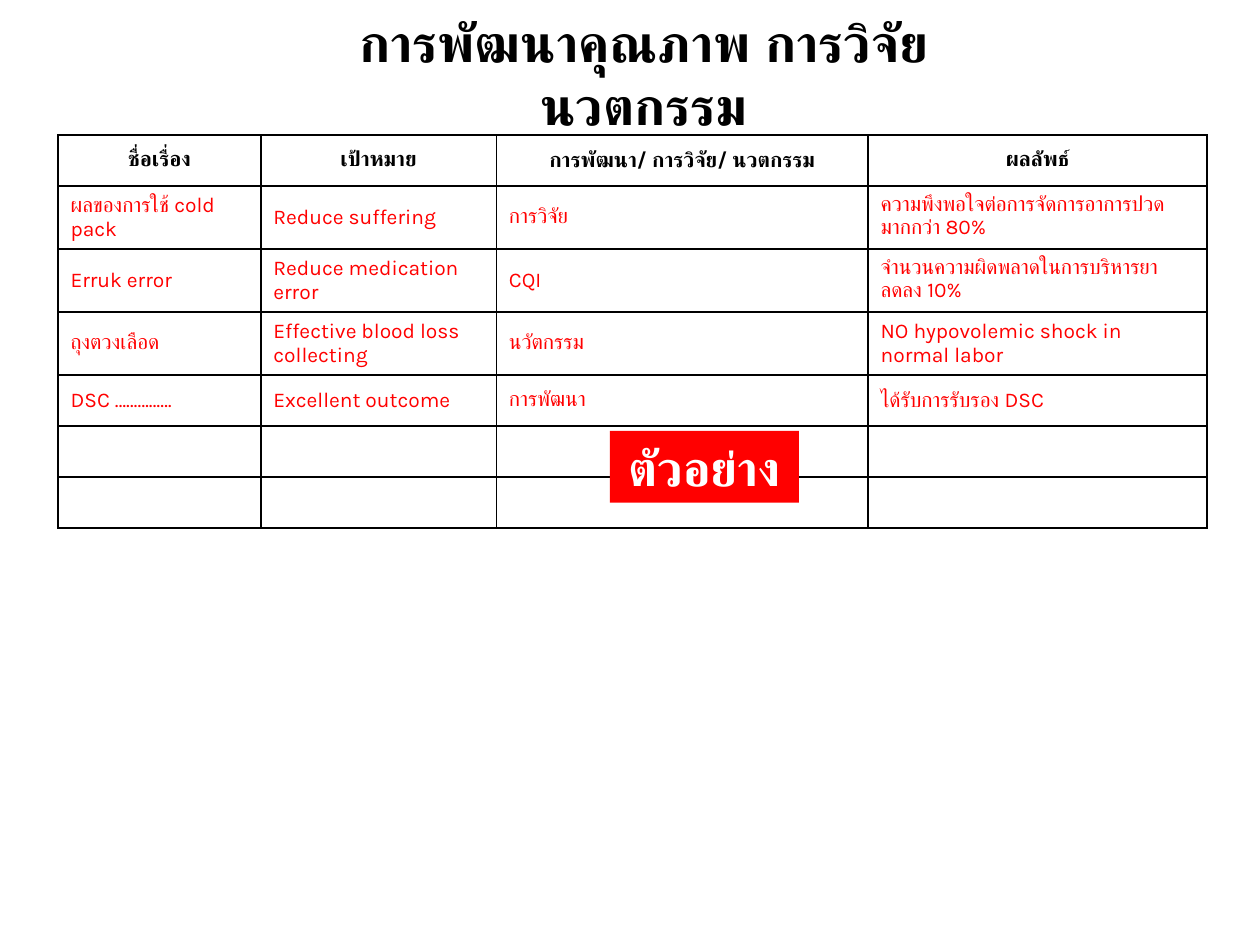
from lxml.etree import SubElement
from pptx import Presentation
from pptx.dml.color import RGBColor
from pptx.enum.shapes import MSO_SHAPE as Shape
from pptx.enum.text import MSO_ANCHOR as Anchor, PP_ALIGN as Align
from pptx.oxml.ns import qn
from pptx.util import Inches, Pt

COLORS = {"ink": "000000", "accent": "FF0000", "paper": "FFFFFF"}
WIDTH, HEIGHT = 10, 7.5
GRID_COLUMNS, GRID_ROWS = 100, 75

HEADINGS = ["ชื่อเรื่อง", "เป้าหมาย", "การพัฒนา/ การวิจัย/ นวตกรรม", "ผลลัพธ์"]
PROJECTS = [
    ["ผลของการใช้ cold pack", "Reduce suffering", "การวิจัย",
     "ความพึงพอใจต่อการจัดการอาการปวดมากกว่า 80%"],
    ["Erruk error", "Reduce medication error", "CQI",
     "จำนวนความผิดพลาดในการบริหารยา ลดลง 10%"],
    ["ถุงตวงเลือด", "Effective blood loss collecting", "นวัตกรรม",
     "NO hypovolemic shock in normal labor"],
    ["DSC ……………", "Excellent outcome", "การพัฒนา", "ได้รับการรับรอง DSC"],
]
EMPTY_ROWS = 2


def color(name):
    return RGBColor.from_string(COLORS[name])


def write(frame, text, font="Karla", size=12, ink="ink", bold=False, align=Align.LEFT):
    paragraph = frame.paragraphs[0]
    paragraph.alignment = align
    paragraph.font.size = Pt(size)
    if not text:
        return
    run = paragraph.add_run()
    run.text = text
    run.font.name = font
    run.font.size = Pt(size)
    run.font.bold = bold
    run.font.color.rgb = color(ink)


class SlideBuilder:
    def __init__(self, presentation):
        self.slide = presentation.slides.add_slide(presentation.slide_layouts[6])
        self.column = Inches(WIDTH / GRID_COLUMNS)
        self.row = Inches(HEIGHT / GRID_ROWS)

    def area(self, left, top, width, height):
        return (round(left * self.column), round(top * self.row),
                round(width * self.column), round(height * self.row))

    def title(self, text, *area):
        frame = self.slide.shapes.add_textbox(*self.area(*area)).text_frame
        frame.word_wrap = True
        frame.vertical_anchor = Anchor.MIDDLE
        frame.margin_left = frame.margin_right = Inches(0.07)
        frame.margin_top = frame.margin_bottom = Inches(0.04)
        write(frame, text, font="Roboto", size=30, bold=True, align=Align.CENTER)

    def label(self, text, *area):
        shape = self.slide.shapes.add_shape(Shape.RECTANGLE, *self.area(*area))
        shape.shadow.inherit = False
        shape.fill.solid()
        shape.fill.fore_color.rgb = color("accent")
        shape.line.fill.background()
        shape.text_frame.word_wrap = False
        write(shape.text_frame, text, font="Calibri", size=28, ink="paper",
              bold=True, align=Align.CENTER)

    def table(self, rows, left, top, widths, row_height):
        area = self.area(left, top, sum(widths), row_height * len(rows))
        table = self.slide.shapes.add_table(len(rows), len(widths), *area).table
        for column, width in zip(table.columns, widths):
            column.width = round(width * self.column)
        for row_index, texts in enumerate(rows):
            table.rows[row_index].height = round(row_height * self.row)
            for column_index, text in enumerate(texts):
                self.cell(table.cell(row_index, column_index), text, row_index == 0)

    def cell(self, cell, text, heading):
        cell.vertical_anchor = Anchor.MIDDLE
        if heading:
            cell.margin_left = cell.margin_right = Inches(0.06)
            cell.margin_top = cell.margin_bottom = 0
            write(cell.text_frame, text, bold=True, align=Align.CENTER)
        else:
            write(cell.text_frame, text, ink="accent")
        # Borders come before the fill in the cell properties
        properties = cell._tc.get_or_add_tcPr()
        for side in ("a:lnL", "a:lnR", "a:lnT", "a:lnB"):
            line = SubElement(properties, qn(side), w=str(Pt(1)))
            fill = SubElement(line, qn("a:solidFill"))
            SubElement(fill, qn("a:srgbClr"), val=COLORS["ink"])
        cell.fill.background()


def main():
    presentation = Presentation()
    presentation.slide_width, presentation.slide_height = Inches(WIDTH), Inches(HEIGHT)
    builder = SlideBuilder(presentation)

    # Title
    builder.title("การพัฒนาคุณภาพ การวิจัย นวตกรรม", 26.2, 2.9, 49.8, 5.8)

    # Project table, with rows left to fill in
    blanks = [[""] * len(HEADINGS)] * EMPTY_ROWS
    builder.table([HEADINGS, *PROJECTS, *blanks], left=4.6, top=10.7,
                  widths=[16.1, 18.7, 29.5, 26.9], row_height=4.05)

    # Example label
    builder.label("ตัวอย่าง", 48.4, 34.2, 15, 5.7)

    presentation.save("out.pptx")


if __name__ == "__main__":
    main()
